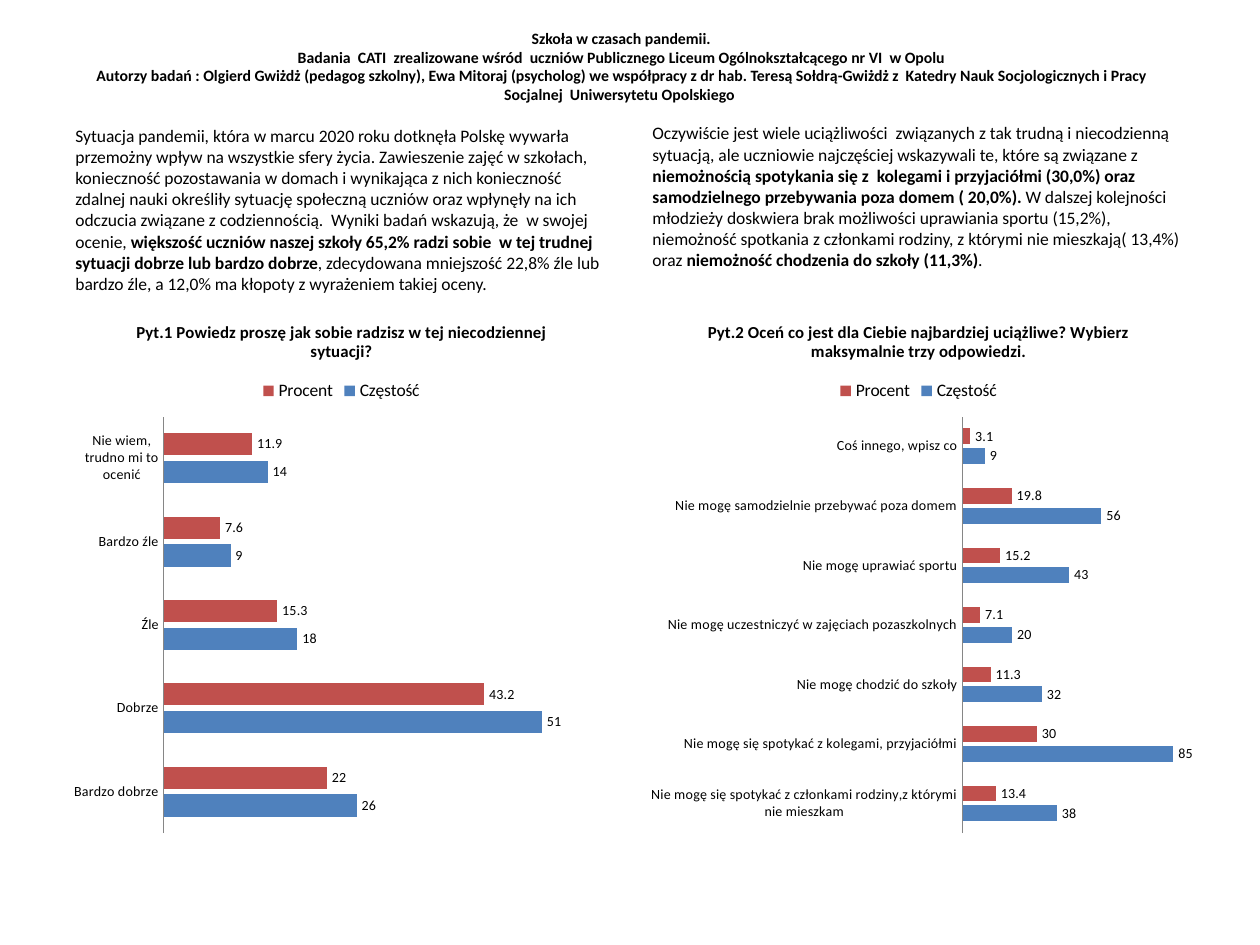
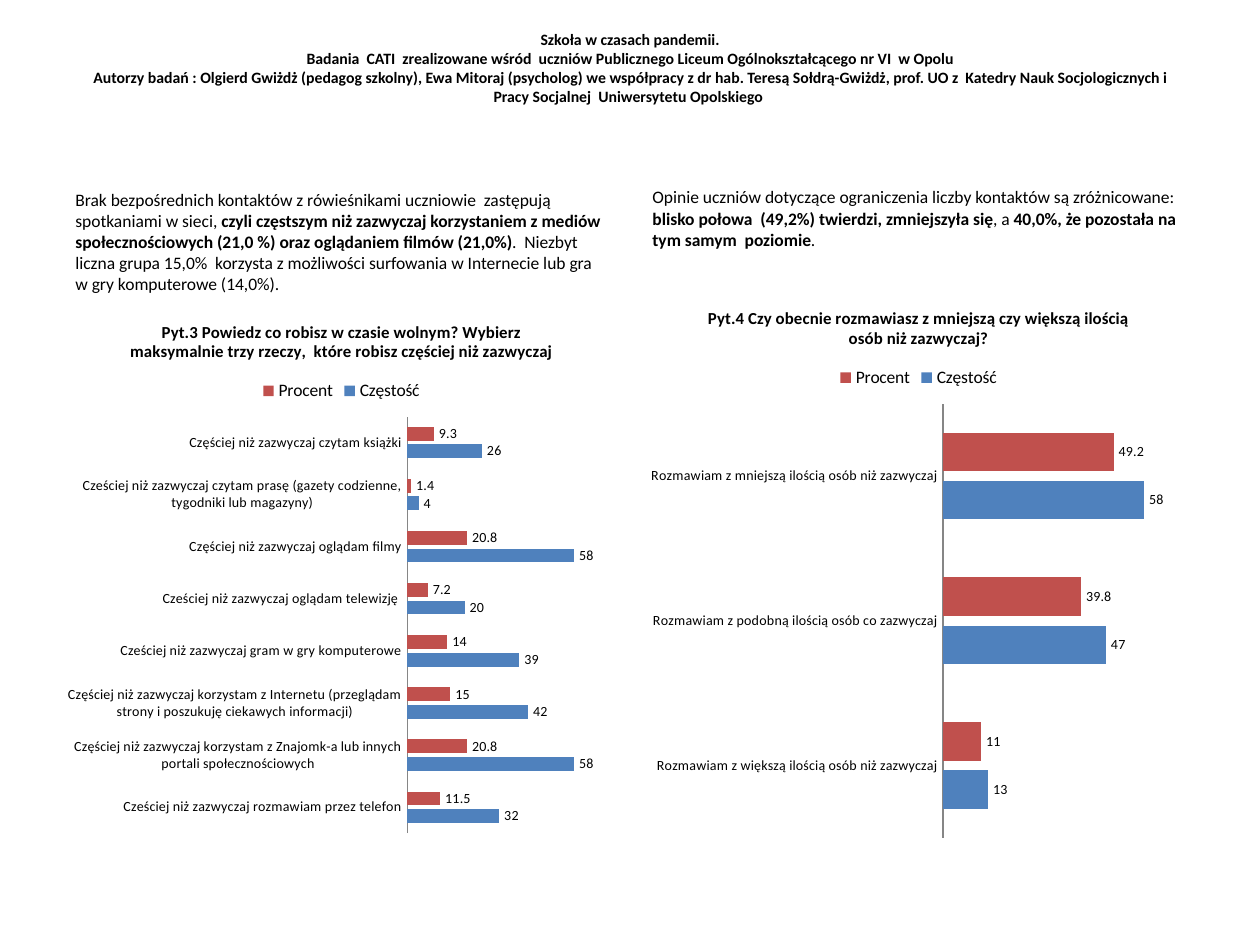
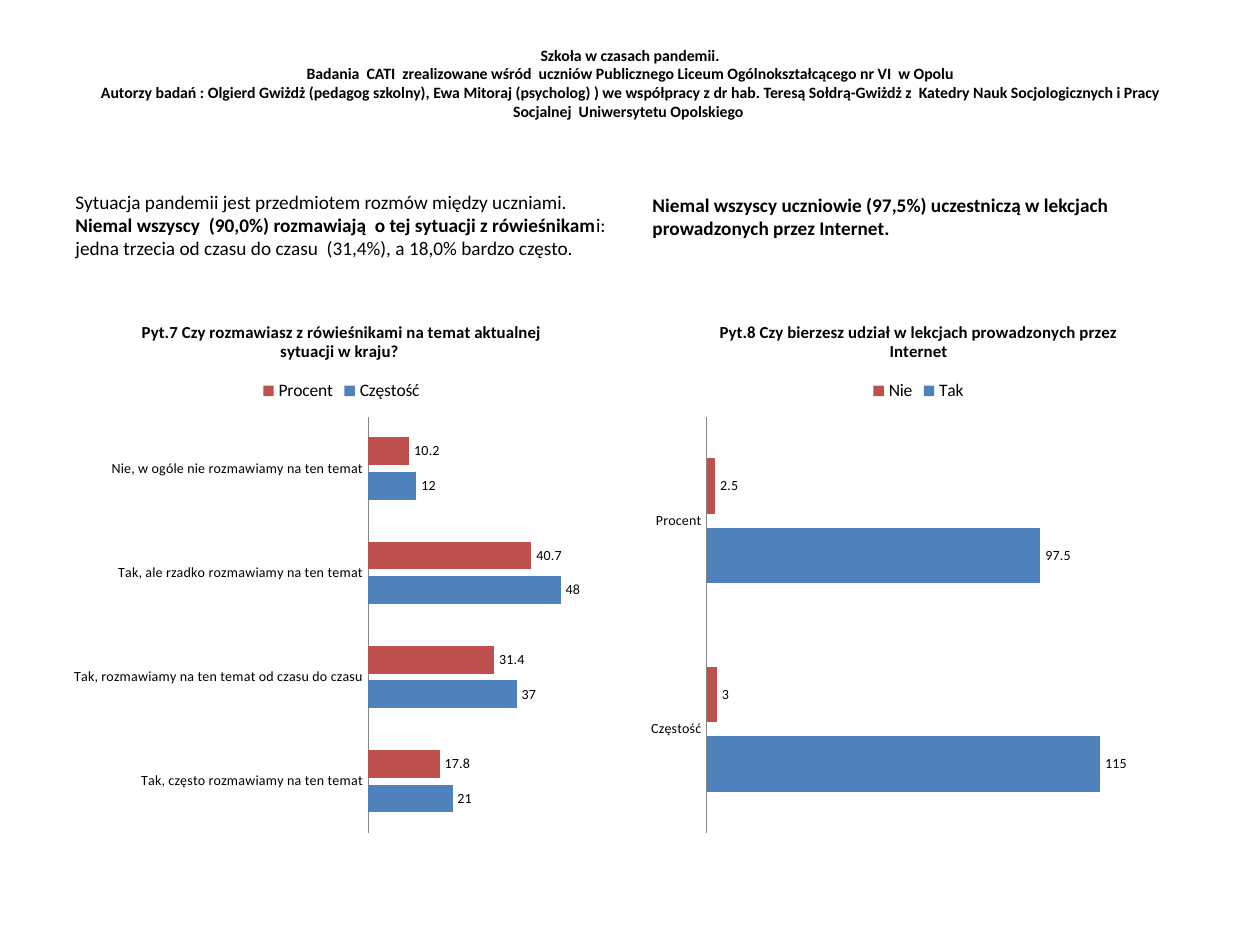
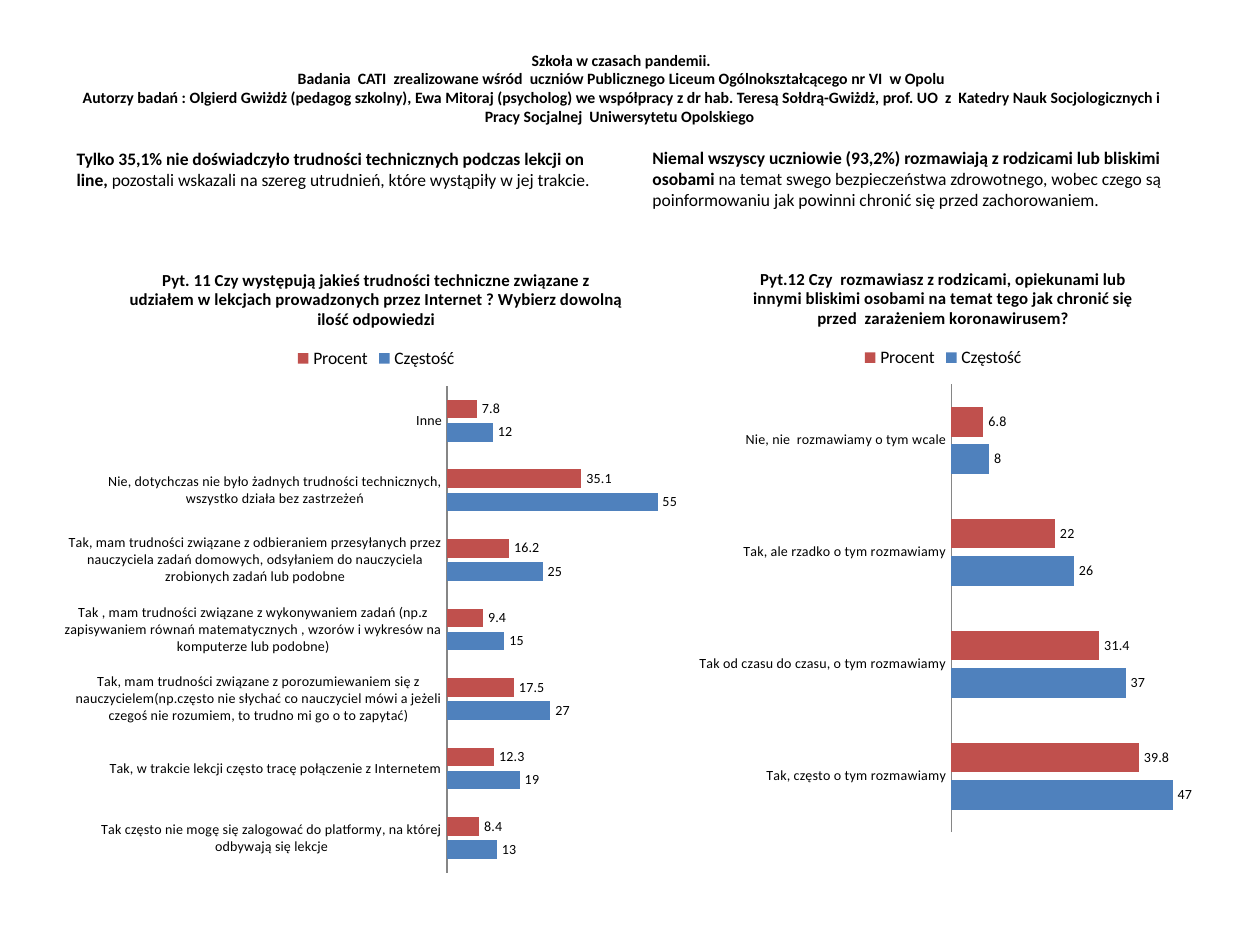
from pptx import Presentation
from pptx import util as u
from pptx.chart.data import CategoryChartData
from pptx.dml.color import RGBColor
from pptx.enum import chart as ch
from pptx.enum import text

BLACK = RGBColor(0x00, 0x00, 0x00)
BLUE = RGBColor(0x4F, 0x81, 0xBD)
RED = RGBColor(0xC0, 0x50, 0x4D)
GRAY = RGBColor(0x86, 0x86, 0x86)

LEFT, RIGHT = 0.5, 5.08
COLUMN = 4.42
CHART_TOP, CHART_HEIGHT = 2.38, 4.32

HEADING = ("Szkoła w czasach pandemii.",
           "Badania  CATI  zrealizowane wśród  uczniów Publicznego Liceum "
           "Ogólnokształcącego nr VI  w Opolu")
AUTHORS = ("Autorzy badań : Olgierd Gwiżdż (pedagog szkolny), Ewa Mitoraj (psycholog) {}"
           "we współpracy z dr hab. Teresą Sołdrą-Gwiżdż{} z  Katedry Nauk Socjologicznych "
           "i Pracy Socjalnej  Uniwersytetu Opolskiego ")
MEASURES = ("Częstość", "Procent")


def assign(target, values):
    for name, value in values.items():
        setattr(target, name, value)


class Report:
    """Holds the shared style and the slide being filled."""

    font_name = "Calibri"
    frame = dict(word_wrap=True, auto_size=text.MSO_AUTO_SIZE.NONE)

    def __init__(self):
        self.deck = Presentation()
        assign(self.deck, dict(slide_width=u.Inches(10), slide_height=u.Inches(7.5)))
        self.slide = None

    def style(self, font, size, bold=False):
        assign(font, dict(name=self.font_name, size=u.Pt(size), bold=bold))
        font.color.rgb = BLACK

    def place(self, shape, left, top, width, height):
        box = dict(left=left, top=top, width=width, height=height)
        assign(shape, {side: u.Inches(length) for side, length in box.items()})

    def start(self, left, top, height, after_psychologist="", after_professor=""):
        """Add a slide with the study heading as its title."""
        self.slide = self.deck.slides.add_slide(self.deck.slide_layouts[5])
        heading = self.slide.shapes.title
        self.place(heading, left, top, 9, height)
        assign(heading.text_frame, dict(self.frame, vertical_anchor=text.MSO_ANCHOR.MIDDLE))
        paragraph = heading.text_frame.paragraphs[0]
        paragraph.alignment = text.PP_ALIGN.CENTER
        authors = AUTHORS.format(after_psychologist, after_professor)
        for number, line in enumerate((*HEADING, authors)):
            if number:
                paragraph.add_line_break()
            run = paragraph.add_run()
            run.text = line
            self.style(run.font, 9, bold=True)

    def finding(self, left, top, height, wording, size=10):
        """Add a paragraph; parts between double asterisks are bold."""
        box = self.slide.shapes.add_textbox(*map(u.Inches, (left, top, COLUMN, height)))
        assign(box.text_frame, dict(self.frame, vertical_anchor=text.MSO_ANCHOR.BOTTOM))
        paragraph = box.text_frame.paragraphs[0]
        paragraph.space_before = u.Pt(size * 0.2)
        for number, part in enumerate(wording.split("**")):
            if part:
                run = paragraph.add_run()
                run.text = part
                self.style(run.font, size, bold=number % 2 == 1)

    def question(self, left, wording, answers, top=CHART_TOP, width=COLUMN,
                 height=CHART_HEIGHT, measures=MEASURES):
        """Add a bar chart; each answer is (label, first value, second value)."""
        labels, *columns = zip(*answers)
        data = CategoryChartData()
        data.categories = labels
        for measure, values in zip(measures, columns):
            data.add_series(measure, values)
        chart = self.slide.shapes.add_chart(
            ch.XL_CHART_TYPE.BAR_CLUSTERED,
            *map(u.Inches, (left, top, width, height)), data).chart
        self.style(chart.font, 10)

        chart.has_title = True
        title = chart.chart_title
        title.include_in_layout = False
        title.text_frame.text = wording
        self.style(title.text_frame.paragraphs[0].runs[0].font, 9.6, bold=True)

        chart.has_legend = True
        assign(chart.legend, dict(position=ch.XL_LEGEND_POSITION.TOP, include_in_layout=False))
        self.style(chart.legend.font, 10)

        assign(chart.value_axis, dict(visible=False, has_major_gridlines=False))
        axis = chart.category_axis
        assign(axis, dict(major_tick_mark=ch.XL_TICK_MARK.NONE,
                          minor_tick_mark=ch.XL_TICK_MARK.NONE,
                          has_major_gridlines=False))
        axis.format.line.color.rgb = GRAY
        axis.format.line.width = u.Pt(0.75)
        self.style(axis.tick_labels.font, 8)

        plot = chart.plots[0]
        assign(plot, dict(gap_width=150, overlap=-25, vary_by_categories=False))
        for series, color in zip(plot.series, (BLUE, RED)):
            series.format.fill.solid()
            series.format.fill.fore_color.rgb = color
            series.invert_if_negative = False
            assign(series.data_labels, dict(
                show_value=True, position=ch.XL_LABEL_POSITION.OUTSIDE_END))
            self.style(series.data_labels.font, 8)


def coping(report):
    report.start(0.43, 0.29, 0.47)
    report.finding(LEFT, 0.78, 1.6, (
        "Sytuacja pandemii, która w marcu 2020 roku dotknęła Polskę wywarła przemożny wpływ "
        "na wszystkie sfery życia. Zawieszenie zajęć w szkołach, konieczność pozostawania "
        "w domach i wynikająca z nich konieczność zdalnej nauki określiły sytuację społeczną "
        "uczniów oraz wpłynęły na ich odczucia związane z codziennością.  Wyniki badań "
        "wskazują, że  w swojej ocenie, **większość uczniów naszej szkoły 65,2% radzi sobie  "
        "w tej trudnej sytuacji dobrze lub bardzo dobrze**, zdecydowana mniejszość 22,8% źle "
        "lub bardzo źle, a 12,0% ma kłopoty z wyrażeniem takiej oceny."))
    report.question(
        LEFT, "Pyt.1 Powiedz proszę jak sobie radzisz w tej niecodziennej sytuacji?", [
            ("Bardzo dobrze", 26, 22),
            ("Dobrze", 51, 43.2),
            ("Źle", 18, 15.3),
            ("Bardzo źle", 9, 7.6),
            ("Nie wiem, trudno mi to ocenić", 14, 11.9)])
    report.finding(RIGHT, 0.92, 1.27, (
        "Oczywiście jest wiele uciążliwości  związanych z tak trudną i niecodzienną sytuacją, "
        "ale uczniowie najczęściej wskazywali te, które są związane z  **niemożnością "
        "spotykania się z  kolegami i przyjaciółmi (30,0%) oraz samodzielnego przebywania "
        "poza domem ( 20,0%). **W dalszej kolejności młodzieży doskwiera brak możliwości "
        "uprawiania sportu (15,2%), niemożność spotkania z członkami rodziny, z którymi nie "
        "mieszkają( 13,4%) oraz **niemożność chodzenia do szkoły (11,3%)**."))
    report.question(
        RIGHT, "Pyt.2 Oceń co jest dla Ciebie najbardziej uciążliwe? Wybierz maksymalnie "
        "trzy odpowiedzi.", [
            ("Nie mogę się spotykać z członkami rodziny,z którymi nie mieszkam", 38, 13.4),
            ("Nie mogę się spotykać z kolegami, przyjaciółmi", 85, 30),
            ("Nie mogę chodzić do szkoły", 32, 11.3),
            ("Nie mogę uczestniczyć w zajęciach pozaszkolnych", 20, 7.1),
            ("Nie mogę uprawiać sportu", 43, 15.2),
            ("Nie mogę samodzielnie przebywać poza domem", 56, 19.8),
            ("Coś innego, wpisz co", 9, 3.1)])


def free_time(report):
    report.start(0.5, 0.3, 0.48, after_professor=", prof. UO")
    report.finding(LEFT, 0.94, 1.44, (
        "Brak bezpośrednich kontaktów z rówieśnikami uczniowie  zastępują spotkaniami "
        "w sieci, **czyli częstszym niż zazwyczaj korzystaniem z mediów społecznościowych "
        "(21,0 %) oraz oglądaniem filmów (21,0%)**.  Niezbyt liczna grupa 15,0%  korzysta "
        "z możliwości surfowania w Internecie lub gra w gry komputerowe (14,0%)."))
    report.finding(RIGHT, 1.25, 0.78, (
        "Opinie uczniów dotyczące ograniczenia liczby kontaktów są zróżnicowane: **blisko "
        "połowa  (49,2%) twierdzi, zmniejszyła się**, a **40,0%, że pozostała na tym "
        "samym  poziomie**."))
    report.question(
        LEFT, "Pyt.3 Powiedz co robisz w czasie wolnym? Wybierz maksymalnie trzy rzeczy,  "
        "które robisz częściej niż zazwyczaj", [
            ("Cześciej niż zazwyczaj rozmawiam przez telefon", 32, 11.5),
            ("Częściej niż zazwyczaj korzystam z Znajomk-a lub innych portali "
             "społecznościowych", 58, 20.8),
            ("Częściej niż zazwyczaj korzystam z Internetu (przeglądam strony i poszukuję "
             "ciekawych informacji)", 42, 15),
            ("Cześciej niż zazwyczaj gram w gry komputerowe", 39, 14),
            ("Cześciej niż zazwyczaj oglądam telewizję ", 20, 7.2),
            ("Częściej niż zazwyczaj oglądam filmy", 58, 20.8),
            ("Cześciej niż zazwyczaj czytam prasę (gazety codzienne, tygodniki lub "
             "magazyny)", 4, 1.4),
            ("Częściej niż zazwyczaj czytam książki", 26, 9.3)])
    report.question(
        RIGHT, "Pyt.4 Czy obecnie rozmawiasz z mniejszą czy większą ilością osób niż "
        "zazwyczaj?", [
            ("Rozmawiam z większą ilością osób niż zazwyczaj", 13, 11),
            ("Rozmawiam z podobną ilością osób co zazwyczaj", 47, 39.8),
            ("Rozmawiam z mniejszą ilością osób niż zazwyczaj", 58, 49.2)],
        top=2.27, height=4.47)


def peers_and_lessons(report):
    report.start(0.5, 0.3, 0.72, after_psychologist=") ")
    report.finding(LEFT, 1.33, 0.78, (
        "Sytuacja pandemii jest przedmiotem rozmów między uczniami. **Niemal wszyscy  (90,0%) "
        "rozmawiają  o tej sytuacji z rówieśnikam**i: jedna trzecia od czasu do czasu  "
        "(31,4%), a 18,0% bardzo często."), size=11)
    report.finding(RIGHT, 1.25, 0.7, (
        "**Niemal wszyscy uczniowie (97,5%) uczestniczą w lekcjach prowadzonych przez "
        "Internet.**"), size=11)
    report.question(
        LEFT, "Pyt.7 Czy rozmawiasz z rówieśnikami na temat aktualnej sytuacji w kraju? ", [
            ("Tak, często rozmawiamy na ten temat", 21, 17.8),
            ("Tak, rozmawiamy na ten temat od czasu do czasu", 37, 31.4),
            ("Tak, ale rzadko rozmawiamy na ten temat", 48, 40.7),
            ("Nie, w ogóle nie rozmawiamy na ten temat", 12, 10.2)])
    report.question(
        RIGHT, "Pyt.8 Czy bierzesz udział w lekcjach prowadzonych przez Internet", [
            ("Częstość", 115, 3),
            ("Procent", 97.5, 2.5)],
        measures=("Tak", "Nie"))


def difficulties_and_safety(report):
    report.start(0.43, 0.31, 0.78, after_professor=", prof. UO ")
    report.finding(0.51, 1.09, 0.47, (
        "**Tylko 35,1% nie doświadczyło trudności technicznych podczas lekcji on line, "
        "**pozostali wskazali na szereg utrudnień, które wystąpiły w jej trakcie."))
    report.finding(RIGHT, 1.02, 0.7, (
        "**Niemal wszyscy uczniowie (93,2%) rozmawiają z rodzicami lub bliskimi osobami **na "
        "temat swego bezpieczeństwa zdrowotnego, wobec czego są poinformowaniu jak powinni "
        "chronić się przed zachorowaniem."))
    report.question(
        LEFT, "Pyt. 11 Czy występują jakieś trudności techniczne związane z udziałem "
        "w lekcjach prowadzonych przez Internet ? Wybierz dowolną ilość odpowiedzi", [
            ("Tak często nie mogę się zalogować do platformy, na której odbywają się "
             "lekcje", 13, 8.4),
            ("Tak, w trakcie lekcji często tracę połączenie z Internetem", 19, 12.3),
            ("Tak, mam trudności związane z porozumiewaniem się z nauczycielem(np.często "
             "nie słychać co nauczyciel mówi a jeżeli czegoś nie rozumiem, to trudno mi go "
             "o to zapytać)", 27, 17.5),
            ("Tak , mam trudności związane z wykonywaniem zadań (np.z zapisywaniem równań "
             "matematycznych , wzorów i wykresów na komputerze lub podobne)", 15, 9.4),
            ("Tak, mam trudności związane z odbieraniem przesyłanych przez nauczyciela zadań "
             "domowych, odsyłaniem do nauczyciela zrobionych zadań lub podobne", 25, 16.2),
            ("Nie, dotychczas nie było żadnych trudności technicznych, wszystko działa bez "
             "zastrzeżeń", 55, 35.1),
            ("Inne", 12, 7.8)],
        top=1.95, width=4.97, height=5.08)
    report.question(
        5.47, "Pyt.12 Czy  rozmawiasz z rodzicami, opiekunami lub innymi bliskimi osobami "
        "na temat tego jak chronić się przed  zarażeniem koronawirusem?", [
            ("Tak, często o tym rozmawiamy", 47, 39.8),
            ("Tak od czasu do czasu, o tym rozmawiamy", 37, 31.4),
            ("Tak, ale rzadko o tym rozmawiamy", 26, 22),
            ("Nie, nie  rozmawiamy o tym wcale", 8, 6.8)],
        top=1.95, width=4.03, height=4.75)


def main():
    report = Report()
    for fill in (coping, free_time, peers_and_lessons, difficulties_and_safety):
        fill(report)
    report.deck.save("out.pptx")


if __name__ == "__main__":
    main()
